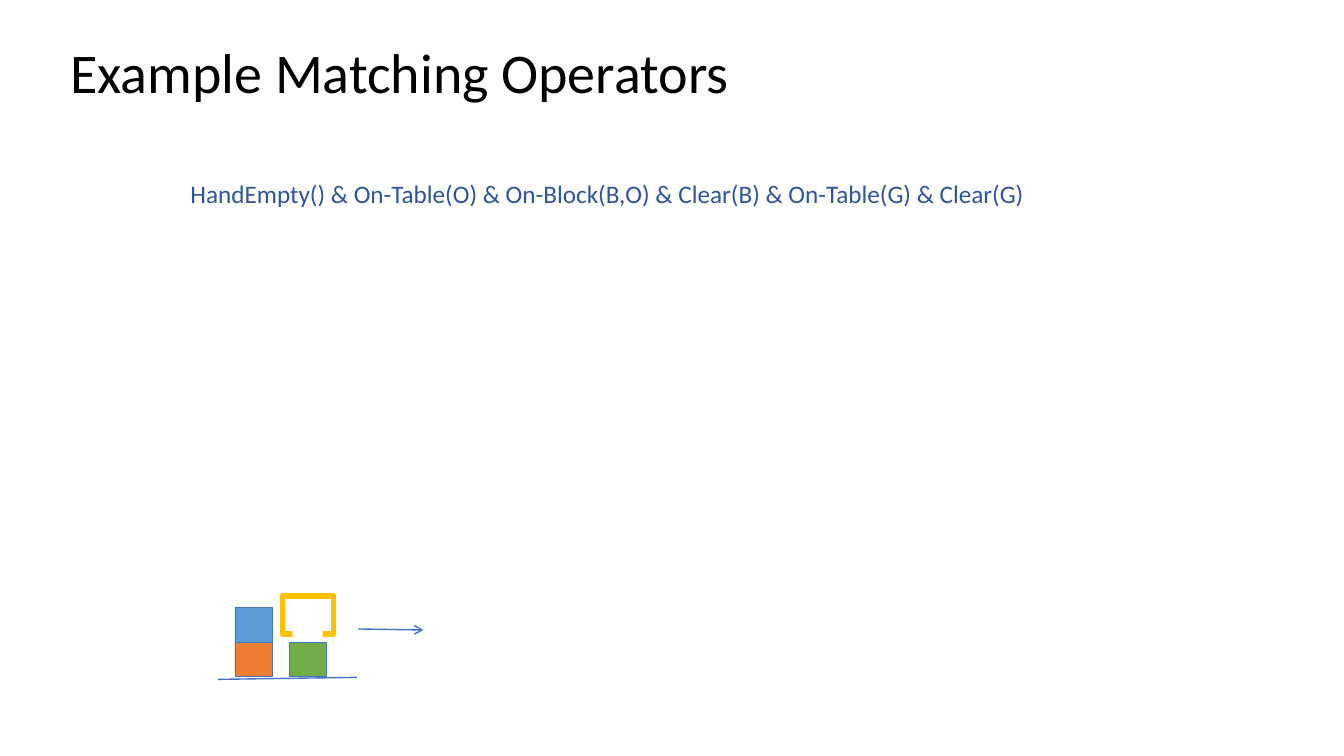
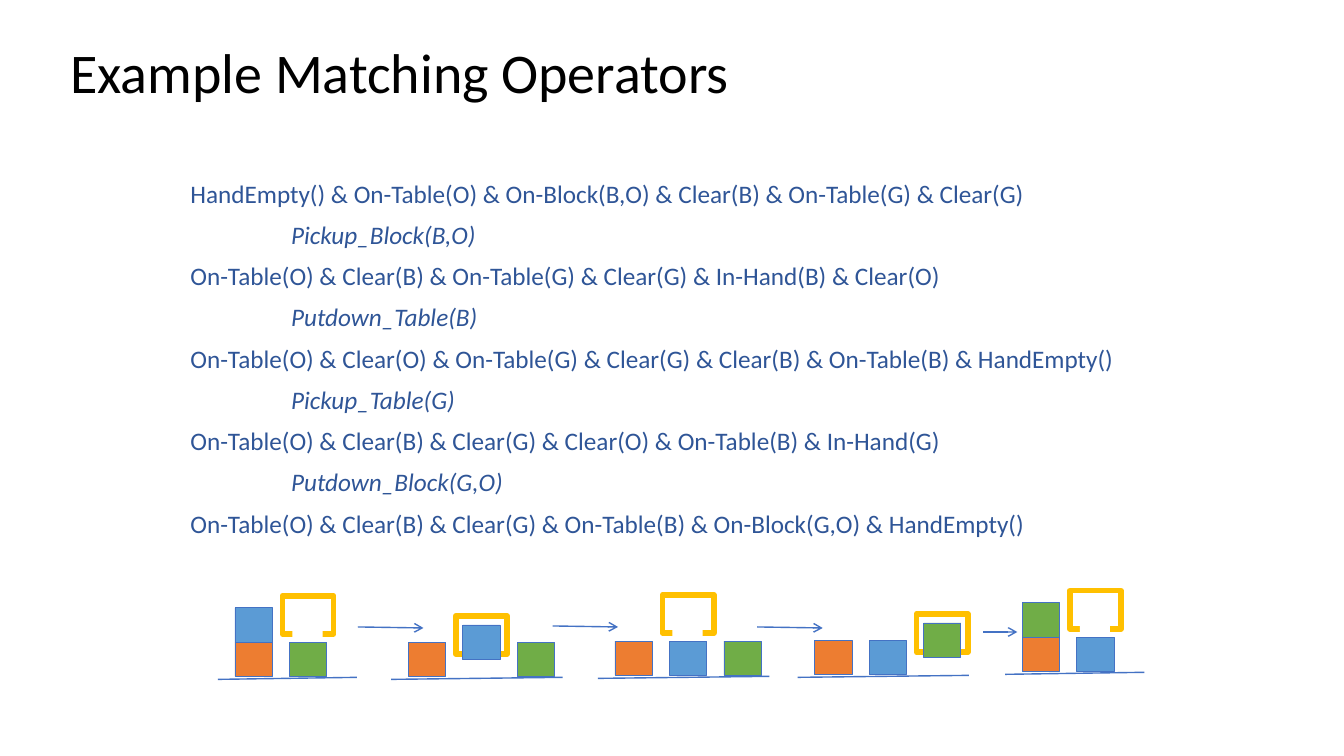
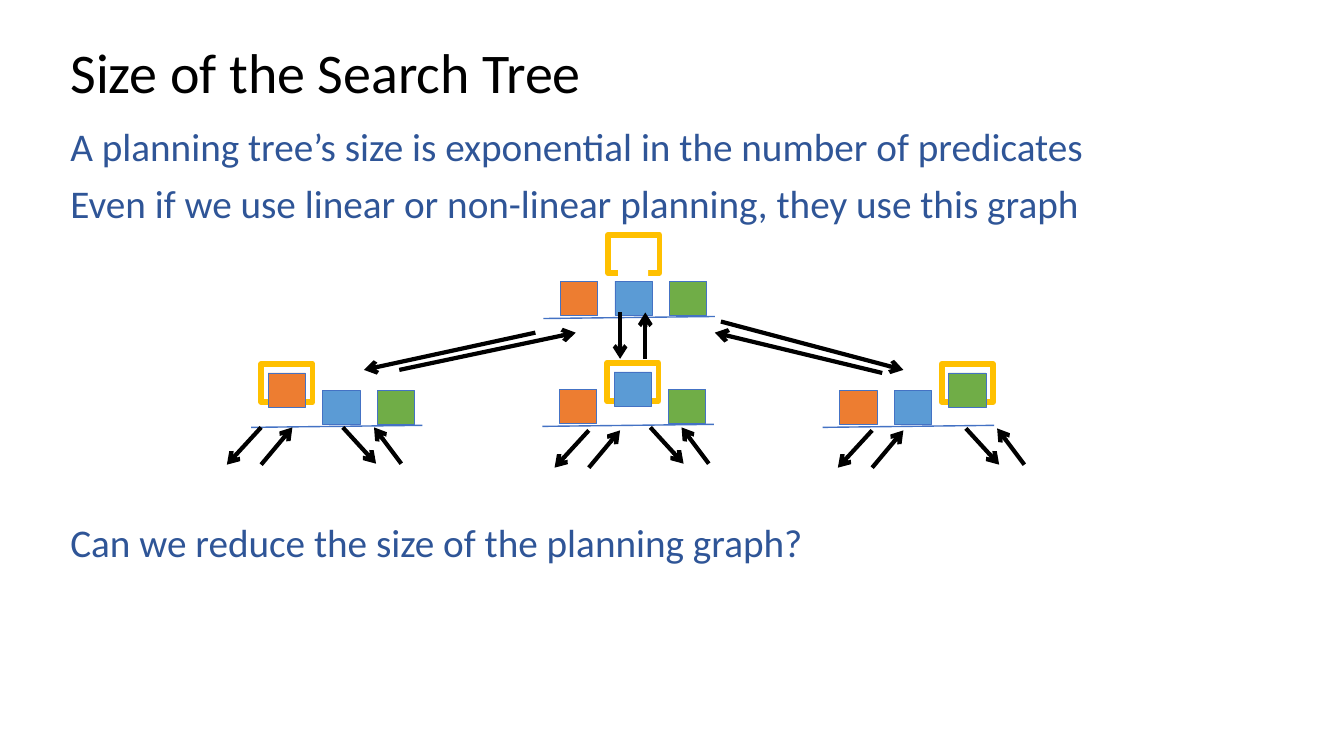
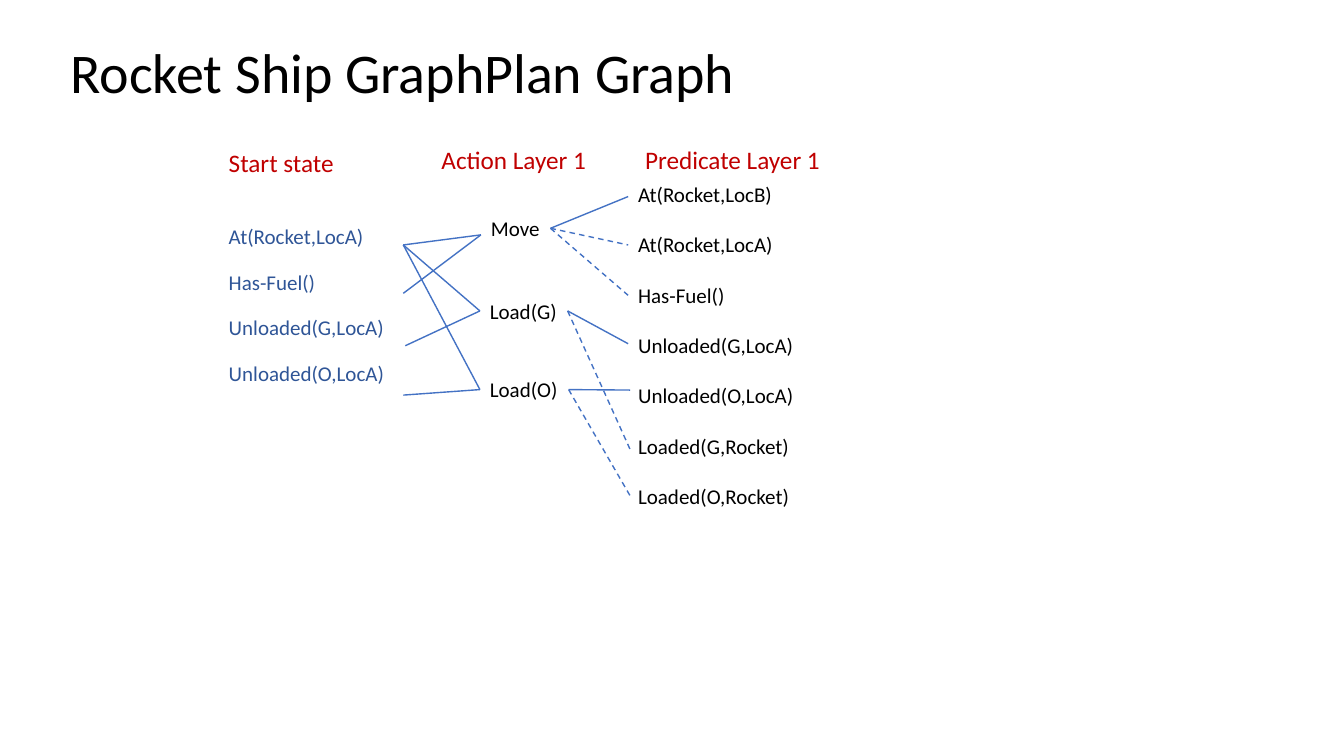
"""Build four slides on block-world planning and GraphPlan."""
from dataclasses import dataclass

from lxml.etree import SubElement
from pptx import Presentation
from pptx.dml.color import RGBColor
from pptx.enum.dml import MSO_LINE
from pptx.enum.shapes import MSO_CONNECTOR, MSO_SHAPE
from pptx.enum.text import MSO_ANCHOR as Anchor
from pptx.oxml.ns import qn
from pptx.util import Inches, Pt


@dataclass(frozen=True)
class Theme:
    font: str = "Calibri"
    black: str = "000000"
    white: str = "FFFFFF"
    navy: str = "2F5597"
    red: str = "C00000"
    line: str = "4472C4"
    gripper: str = "FFC000"
    title: int = 40
    body: int = 28
    formula: int = 18
    node: int = 15


T = Theme()
BLOCK_COLORS = {"O": "ED7D31", "B": "5B9BD5", "G": "70AD47"}

ACTION = {"italic": True, "indent": 1}
PLAN = [
    "HandEmpty() & On-Table(O) & On-Block(B,O) & Clear(B) & On-Table(G) & Clear(G)",
    ("Pickup_Block(B,O)", ACTION),
    "On-Table(O) & Clear(B) & On-Table(G) & Clear(G) & In-Hand(B) & Clear(O)",
    ("Putdown_Table(B)", ACTION),
    "On-Table(O) & Clear(O) & On-Table(G) & Clear(G) & Clear(B) & On-Table(B) & HandEmpty()",
    ("Pickup_Table(G)", ACTION),
    "On-Table(O) & Clear(B) & Clear(G) & Clear(O) & On-Table(B) & In-Hand(G)",
    ("Putdown_Block(G,O)", ACTION),
    "On-Table(O) & Clear(B) & Clear(G) & On-Table(B) & On-Block(G,O) & HandEmpty()",
]

# Each scene: first block's left and top, stacks from bottom to top, held slot.
PLAN_SCENES = [
    (2.33, 6.37, ["OB", "G"], None),
    (4.05, 6.37, ["O", "B", "G"], 1),
    (6.1, 6.36, ["O", "B", "G"], None),
    (8.08, 6.35, ["O", "B", "G"], 2),
    (10.14, 6.32, ["OG", "B"], None),
]
PLAN_ARROWS = [
    ((3.55, 6.22), (4.2, 6.23)),
    ((5.48, 6.21), (6.13, 6.22)),
    ((7.51, 6.22), (8.16, 6.23)),
    ((9.75, 6.27), (10.09, 6.27)),
]

TREE_TEXT = [
    "A planning tree’s size is exponential in the number of predicates",
    "Even if we use linear or non-linear planning, they use this graph",
    ("Can we reduce the size of the planning graph?", {"before": 212}),
]
TREE_SCENES = [
    (5.56, 2.79, ["O", "B", "G"], None),
    (2.66, 3.87, ["O", "B", "G"], 0),
    (5.55, 3.86, ["O", "B", "G"], 1),
    (8.33, 3.87, ["O", "B", "G"], 2),
]
BRANCHES = [
    ((6.15, 3.1), (6.15, 3.56)), ((6.4, 3.56), (6.4, 3.1)),
    ((5.31, 3.3), (3.61, 3.67)), ((3.96, 3.67), (5.71, 3.3)),
    ((7.15, 3.19), (8.96, 3.67)), ((8.75, 3.7), (7.09, 3.3)),
]
LEFT_FAN = [((0, 0), (-0.34, 0.37)), ((0, 0.37), (0.31, 0))]
RIGHT_FAN = [((0, 0), (0.33, 0.36)), ((0.58, 0.36), (0.31, 0))]
FANS = [
    (LEFT_FAN, [(2.59, 4.24), (5.84, 4.27), (8.65, 4.27)]),
    (RIGHT_FAN, [(3.4, 4.24), (6.45, 4.24), (9.58, 4.25)]),
]

HEADINGS = [
    ("Start state", (2.17, 1.41, 1.25, 0.4)),
    ("Action Layer 1", (4.28, 1.38, 1.65, 0.4)),
    ("Predicate Layer 1", (6.3, 1.38, 1.96, 0.4)),
]
STATES = {
    "At(Rocket,LocA)": (4, 2.43),
    "Has-Fuel()": (4, 2.91),
    "Unloaded(G,LocA)": (4.02, 3.43),
    "Unloaded(O,LocA)": (4, 3.92),
}
ACTIONS = {
    "Move": (4.77, 2.09, 0.69, 0.35),
    "Load(G)": (4.76, 2.91, 0.87, 0.35),
    "Load(O)": (4.76, 3.69, 0.88, 0.35),
}
MOVE_ENTRY = (4.77, 2.33)
PREDICATES = {
    "At(Rocket,LocB)": (6.23, 1.95),
    "At(Rocket,LocA)": (6.23, 2.43),
    "Has-Fuel()": (6.23, 2.93),
    "Unloaded(G,LocA)": (6.23, 3.41),
    "Unloaded(O,LocA)": (6.25, 3.87),
    "Loaded(G,Rocket)": (6.25, 4.46),
    "Loaded(O,Rocket)": (6.25, 4.92),
}
PRECONDITIONS = [
    ("At(Rocket,LocA)", "Move"), ("Has-Fuel()", "Move"),
    ("At(Rocket,LocA)", "Load(G)"), ("Unloaded(G,LocA)", "Load(G)"),
    ("At(Rocket,LocA)", "Load(O)"), ("Unloaded(O,LocA)", "Load(O)"),
]
EFFECTS = [
    ("Move", "At(Rocket,LocB)", False), ("Move", "At(Rocket,LocA)", True),
    ("Move", "Has-Fuel()", True),
    ("Load(G)", "Unloaded(G,LocA)", False), ("Load(G)", "Loaded(G,Rocket)", True),
    ("Load(O)", "Unloaded(O,LocA)", False), ("Load(O)", "Loaded(O,Rocket)", True),
]

BLOCK_W, BLOCK_H, PITCH = 0.37, 0.34, 0.54
GRIPPER_W, GRIPPER_H = 0.51, 0.38
LIFT = 0.17
TABLE_WIDTHS = {2: 1.38, 3: 1.7}


def rgb(color):
    return RGBColor.from_string(color)


def write(slide, at, lines, size=T.formula, color=T.navy, spacing=0.9, before=0,
          wrap=True, anchor=Anchor.TOP):
    box = slide.shapes.add_textbox(*map(Inches, at))
    frame = box.text_frame
    frame.word_wrap, frame.vertical_anchor = wrap, anchor
    for i, line in enumerate(lines):
        text, style = (line, {}) if isinstance(line, str) else line
        paragraph = frame.add_paragraph() if i else frame.paragraphs[0]
        paragraph.line_spacing = spacing
        paragraph.space_before = Pt(style.get("before", before) if i else 0)
        if "indent" in style:
            paragraph._p.get_or_add_pPr().set("marL", str(Inches(style["indent"])))
        run = paragraph.add_run()
        run.text = text
        run.font.name, run.font.size = T.font, Pt(size)
        run.font.italic = style.get("italic", False)
        run.font.color.rgb = rgb(color)
    return box


def rect(shapes, at, fill=None, line=None, width=0.5):
    shape = shapes.add_shape(MSO_SHAPE.RECTANGLE, *map(Inches, at))
    shape.shadow.inherit = False
    if fill:
        shape.fill.solid()
        shape.fill.fore_color.rgb = rgb(fill)
    else:
        shape.fill.background()
    if line:
        shape.line.color.rgb = rgb(line)
        shape.line.width = Pt(width)
    else:
        shape.line.fill.background()


def connect(shapes, start, end, color=T.line, width=1, arrow=False, dashed=False):
    link = shapes.add_connector(MSO_CONNECTOR.STRAIGHT, *map(Inches, (*start, *end)))
    link.line.color.rgb = rgb(color)
    link.line.width = Pt(width)
    if dashed:
        link.line.dash_style = MSO_LINE.DASH
    properties = link._element.spPr
    if arrow:
        SubElement(properties.find(qn("a:ln")), qn("a:tailEnd"), type="arrow")
    SubElement(properties, qn("a:effectLst"))
    return link


def draw_scene(slide, left, top, stacks, held):
    shapes = slide.shapes.add_group_shape().shapes
    table_x, table_y = left - 0.17, top + 0.37
    connect(shapes, (table_x, table_y),
            (table_x + TABLE_WIDTHS[len(stacks)], table_y - 0.02))

    def block(slot, name, rise):
        rect(shapes, (left + slot * PITCH, top - rise, BLOCK_W, BLOCK_H),
             BLOCK_COLORS[name], T.line)

    for slot, stack in enumerate(stacks):
        if slot != held:
            for level, name in enumerate(stack):
                block(slot, name, level * BLOCK_H)

    grip_slot = 1 if held is None else held
    grip_x = left + grip_slot * PITCH - (GRIPPER_W - BLOCK_W) / 2
    grip_y = top - (0.46 if held is None else LIFT + 0.09)
    rect(shapes, (grip_x, grip_y, GRIPPER_W, GRIPPER_H), line=T.gripper, width=4)
    if held is None:
        rect(shapes, (grip_x + 0.1, grip_y + 0.31, 0.3, 0.12), T.white)
    else:
        block(held, stacks[held], LIFT)


def add_slide(deck, title):
    slide = deck.slides.add_slide(deck.slide_layouts[6])
    write(slide, (0.6, 0.4, 11.5, 0.69), [title], size=T.title, color=T.black,
          anchor=Anchor.MIDDLE)
    return slide


def plan_slide(deck, lines, scenes, arrows):
    slide = add_slide(deck, "Example Matching Operators")
    write(slide, (1.79, 1.75, 10.07, 4.95), lines, before=10)
    for scene in scenes:
        draw_scene(slide, *scene)
    for tail, tip in arrows:
        connect(slide.shapes, tail, tip, arrow=True)


def tree_slide(deck):
    slide = add_slide(deck, "Size of the Search Tree")
    write(slide, (0.6, 1.22, 11.5, 2.23), TREE_TEXT, size=T.body, before=10)
    for scene in TREE_SCENES:
        draw_scene(slide, *scene)
    fan_arrows = [
        tuple((x + dx, y + dy) for dx, dy in ends)
        for fan, pivots in FANS for x, y in pivots for ends in fan
    ]
    for tail, tip in BRANCHES + fan_arrows:
        connect(slide.shapes, tail, tip, T.black, width=3, arrow=True)


def graph_slide(deck):
    slide = add_slide(deck, "Rocket Ship GraphPlan Graph")
    for heading, at in HEADINGS:
        write(slide, at, [heading], color=T.red, spacing=1, wrap=False)
    write(slide, (2.17, 2.2, 2.35, 4.68), STATES, size=T.node, before=16.2)
    write(slide, (6.23, 1.75, 2.35, 5.13), PREDICATES, size=T.node, color=T.black,
          spacing=1, before=18)
    actions = {
        name: write(slide, at, [name], size=T.node, color=T.black, spacing=1, wrap=False)
        for name, at in ACTIONS.items()
    }
    for state, action in PRECONDITIONS:
        link = connect(slide.shapes, STATES[state], MOVE_ENTRY)
        if action != "Move":
            link.end_connect(actions[action], 1)
    for action, predicate, dashed in EFFECTS:
        x, y, width, height = ACTIONS[action]
        link = connect(slide.shapes, (x + width, y + height / 2),
                       PREDICATES[predicate], dashed=dashed)
        link.begin_connect(actions[action], 3)


def main():
    deck = Presentation()
    deck.slide_width, deck.slide_height = Inches(13.33), Inches(7.5)
    plan_slide(deck, PLAN[:1], PLAN_SCENES[:1], [((3.55, 6.24), (4.2, 6.25))])
    plan_slide(deck, PLAN, PLAN_SCENES, PLAN_ARROWS)
    tree_slide(deck)
    graph_slide(deck)
    deck.save("out.pptx")


if __name__ == "__main__":
    main()
